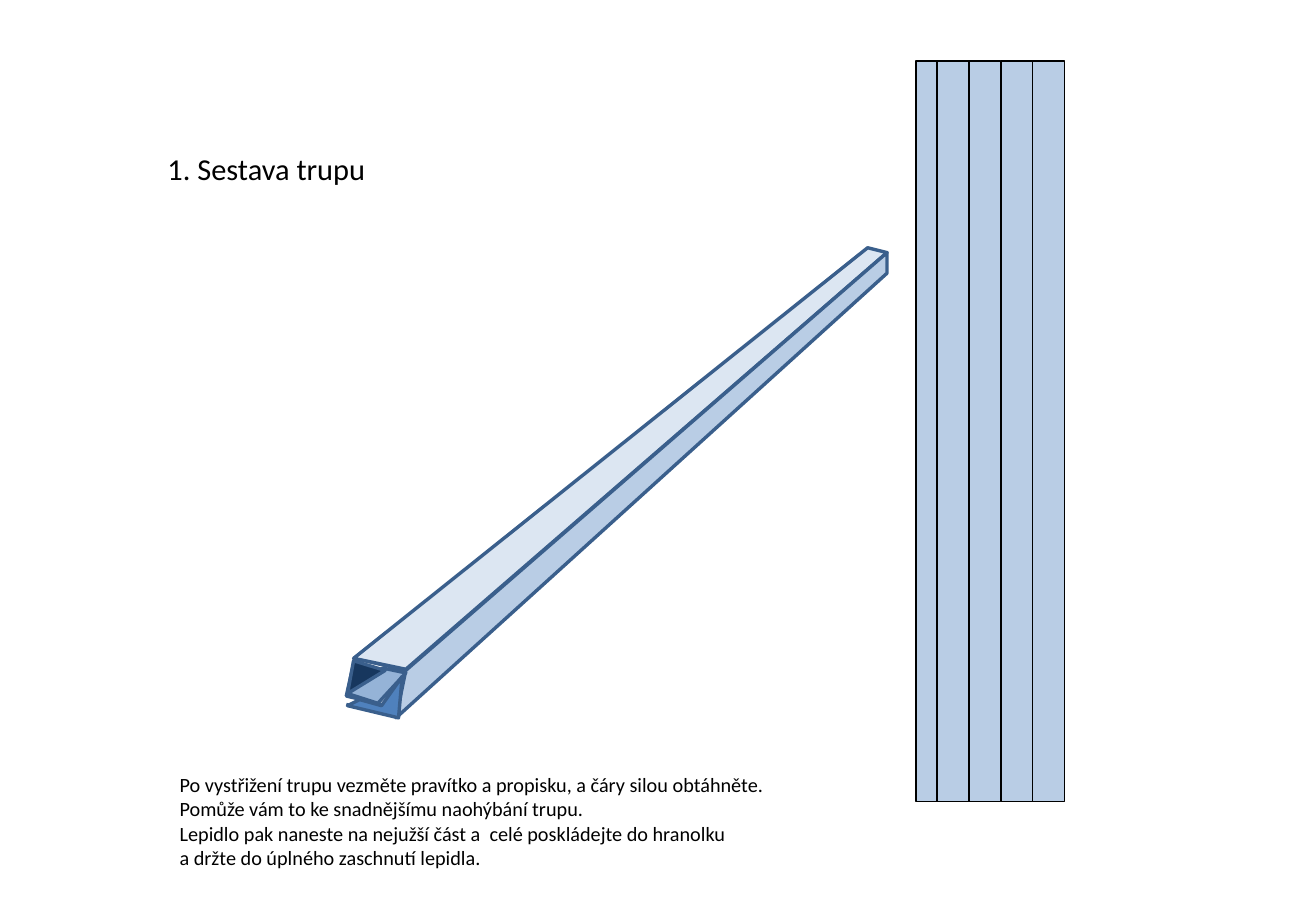
from dataclasses import dataclass

from pptx import Presentation
from pptx.dml.color import RGBColor
from pptx.enum import shapes, text
from pptx.util import Inches, Pt


@dataclass(frozen=True)
class Theme:
    """Colours, font and sizes of the slide."""
    font: str = "Calibri"
    title: int = 18
    body: int = 12
    ink: str = "000000"
    edge: str = "3A5F8C"
    side: str = "B9CDE5"
    top: str = "DCE6F2"
    flap: str = "95B3D7"
    inside: str = "17375E"
    base: str = "4F81BD"


T = Theme()

OPENING = [(0, 376), (42, 386), (50, 348), (7, 338), (0, 369), (29, 376)]
FACES = [
    (T.top, [(6, 338), (429, 0), (445, 4), (49, 347)]),
    (T.side, [(49, 348), (445, 4), (445, 21), (41, 387)]),
    (T.flap, [(1, 367), (30, 346), (49, 350), (26, 375)]),
    (T.inside, [(1, 367), (32, 348), (6, 340)]),
    (T.base, [(1, 377), (11, 372), (29, 377), (46, 353), (43, 387)]),
]
STEPS = [
    "Po vystřižení trupu vezměte pravítko a propisku, a čáry silou obtáhněte.",
    "Pomůže vám to ke snadnějšímu naohýbání trupu.",
    "Lepidlo pak naneste na nejužší část a  celé poskládejte do hranolku",
    "a držte do úplného zaschnutí lepidla.",
]


def paint(sp, fill, line, width):
    """Set fill, line and no shadow; a fill of None leaves the shape empty."""
    sp.shadow.inherit = False
    if fill is None:
        sp.fill.background()
    else:
        sp.fill.solid()
        sp.fill.fore_color.rgb = RGBColor.from_string(fill)
    sp.line.color.rgb = RGBColor.from_string(line)
    sp.line.width = Pt(width)


def add_fold_panel(s, left, top, width, height, tab=0.17, strips=4):
    """Draw the flat sheet: a narrow glue tab followed by equal strips."""
    strip = (width - tab) / strips
    x = left
    for w in [tab] + [strip] * strips:
        sp = s.shapes.add_shape(shapes.MSO_SHAPE.RECTANGLE, Inches(x),
                                Inches(top), Inches(w), Inches(height))
        paint(sp, T.side, T.ink, 1)
        x += w


def add_beam(s, left, top):
    """Draw the folded beam from its open end and faces, in 0.01 inch units."""
    for fill, points in [(None, OPENING)] + FACES:
        builder = s.shapes.build_freeform(*points[0], scale=Inches(0.01))
        builder.add_line_segments(points[1:], close=fill is not None)
        sp = builder.convert_to_shape(Inches(left), Inches(top))
        paint(sp, fill, T.edge, 2)


def add_text(s, left, top, width, height, lines, size):
    """Place unwrapped lines of text in a box."""
    box = s.shapes.add_textbox(Inches(left), Inches(top),
                               Inches(width), Inches(height))
    tf = box.text_frame
    tf.word_wrap = False
    tf.auto_size = text.MSO_AUTO_SIZE.SHAPE_TO_FIT_TEXT
    tf.text = "\n".join(lines)
    for p in tf.paragraphs:
        p.font.name = T.font
        p.font.size = Pt(size)
        p.font.color.rgb = RGBColor.from_string(T.ink)


def main():
    """Build and save the slide."""
    prs = Presentation()
    prs.slide_width, prs.slide_height = Inches(10.83), Inches(7.5)
    s = prs.slides.add_slide(prs.slide_layouts[6])
    add_fold_panel(s, 7.54, 0.5, 1.22, 6.1)
    add_beam(s, 2.85, 2.04)
    add_text(s, 1.28, 1.19, 1.85, 0.4, ["1. Sestava trupu"], T.title)
    add_text(s, 1.38, 6.31, 5.06, 0.91, STEPS, T.body)
    prs.save("out.pptx")


if __name__ == "__main__":
    main()
